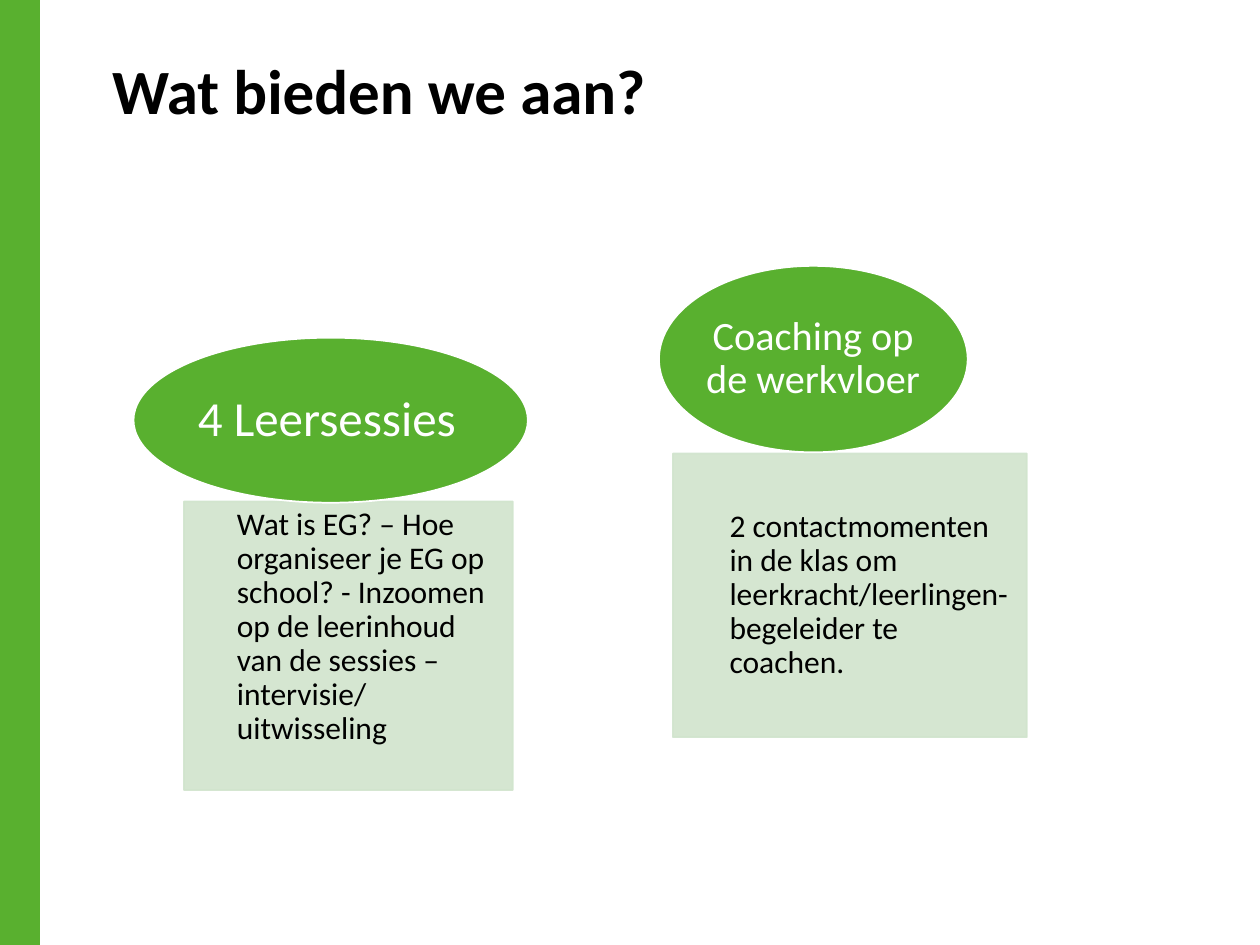
from lxml.etree import SubElement
from pptx import Presentation
from pptx.dml.color import RGBColor
from pptx.enum.shapes import MSO_SHAPE
from pptx.enum.text import MSO_ANCHOR, PP_ALIGN
from pptx.oxml.ns import qn
from pptx.util import Inches, Pt

COLORS = {"green": "59B02F", "pale": "D1E4CD", "white": "FFFFFF", "black": "000000"}
FONT = "Calibri"

OFFERS = [
    {
        "heading": "4 Leersessies",
        "heading_size": 28,
        "heading_box": (1.06, 2.68, 3.13, 1.31),
        "heading_insets": (0, 0, 0.06, 0),
        "detail": "Wat is EG? – Hoe organiseer je EG op school? - Inzoomen op de "
                  "leerinhoud van de sessies – intervisie/ uitwisseling",
        "detail_box": (1.46, 3.98, 2.61, 2.29),
        "detail_insets": (0.42, 0, 0.14, 0.29),
    },
    {
        "heading": "Coaching op de werkvloer",
        "heading_size": 23,
        "heading_box": (5.23, 2.11, 2.45, 1.48),
        "heading_insets": (0, 0, 0, 0),
        "detail": "2 contactmomenten in de klas om "
                  "leerkracht/leerlingen-begeleider te coachen.",
        "detail_box": (5.34, 3.6, 2.81, 2.25),
        "detail_insets": (0.45, 0.14, 0.14, 0.14),
    },
]


def rgb(name):
    """Return the named palette colour."""
    return RGBColor.from_string(COLORS[name])


def add_panel(slide, preset, box, fill, line, opacity=100):
    """Add a filled, outlined shape in the given box."""
    panel = slide.shapes.add_shape(preset, *map(Inches, box))
    panel.shadow.inherit = False
    panel.line.width = Pt(1)
    panel.fill.solid()
    for paint, color in ((panel.fill, fill), (panel.line.fill, line)):
        paint.solid()
        paint.fore_color.rgb = rgb(color)
    if opacity < 100:
        for srgb in panel.element.spPr.iter(qn("a:srgbClr")):
            SubElement(srgb, qn("a:alpha"), val=str(opacity * 1000))
    return panel


def write_text(holder, text, size, color, align, insets, bold=False):
    """Write one middle-anchored paragraph into a shape."""
    frame = holder.text_frame
    frame.text = text
    frame.word_wrap = True
    frame.vertical_anchor = MSO_ANCHOR.MIDDLE
    (frame.margin_left, frame.margin_top,
     frame.margin_right, frame.margin_bottom) = map(Inches, insets)
    paragraph = frame.paragraphs[0]
    paragraph.alignment = align
    paragraph.line_spacing = 0.9
    font = paragraph.runs[0].font
    font.name, font.size, font.bold = FONT, Pt(size), bold
    font.color.rgb = rgb(color)


def place_title(slide, box):
    """Move and format the title placeholder."""
    title = slide.shapes.title
    title.left, title.top, title.width, title.height = map(Inches, box)
    write_text(title, "Wat bieden we aan?", 36, "black", PP_ALIGN.LEFT,
               (0.1, 0.05, 0.1, 0.05), bold=True)


def add_offer(slide, offer):
    """Add a detail panel with its oval heading on top."""
    detail = add_panel(slide, MSO_SHAPE.RECTANGLE, offer["detail_box"], "pale", "pale", 90)
    write_text(detail, offer["detail"], 18, "black", PP_ALIGN.LEFT, offer["detail_insets"])
    heading = add_panel(slide, MSO_SHAPE.OVAL, offer["heading_box"], "green", "white")
    write_text(heading, offer["heading"], offer["heading_size"], "white",
               PP_ALIGN.CENTER, offer["heading_insets"])


def main():
    """Build and save the slide."""
    deck = Presentation()
    deck.slide_width, deck.slide_height = Inches(10), Inches(7.5)
    slide = deck.slides.add_slide(deck.slide_layouts[5])
    add_panel(slide, MSO_SHAPE.RECTANGLE, (0, 0, 0.31, 7.5), "green", "green")
    place_title(slide, (0.79, 0.39, 8.66, 0.71))
    for offer in OFFERS:
        add_offer(slide, offer)
    deck.save("out.pptx")


if __name__ == "__main__":
    main()
